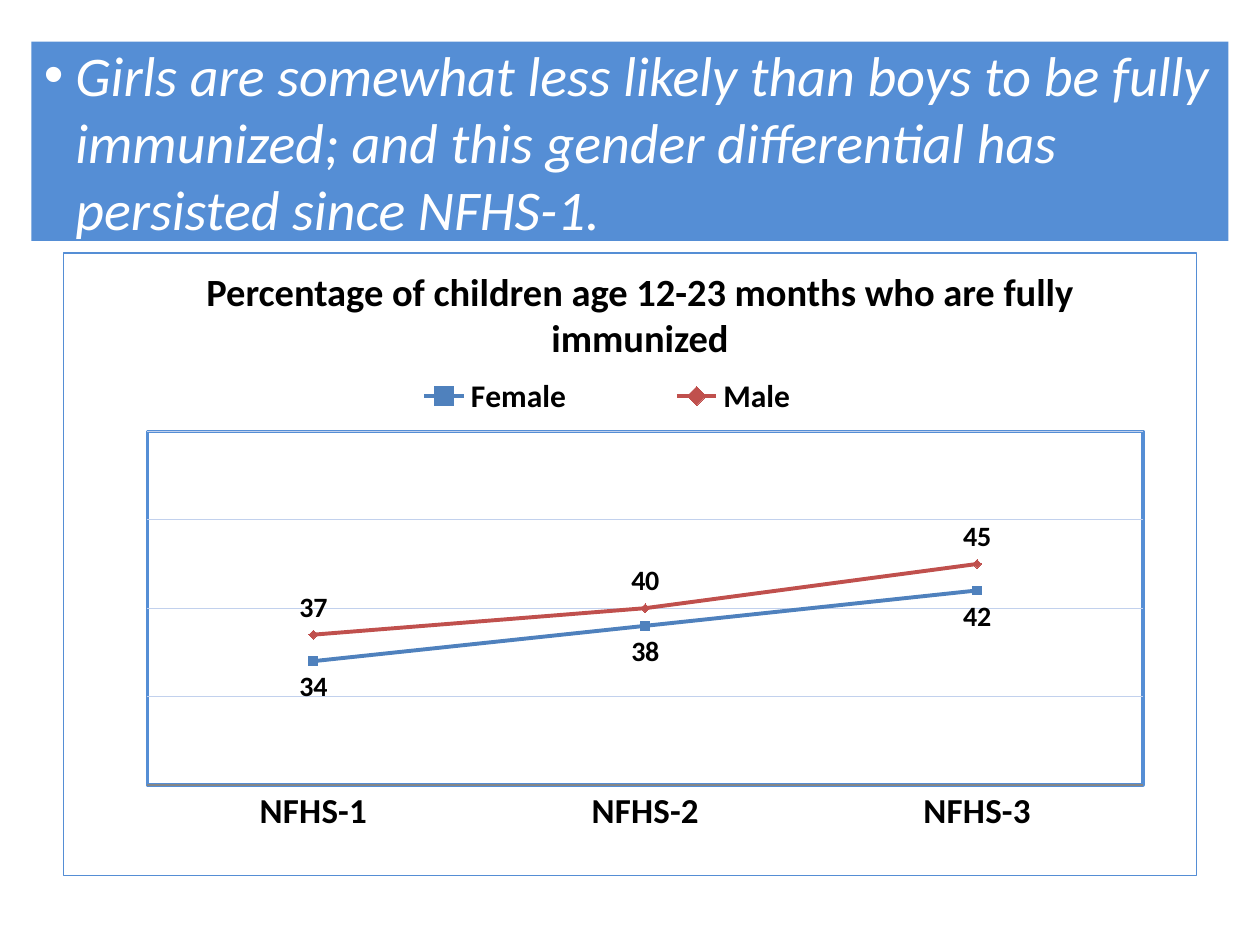
from lxml import etree
from pptx import Presentation
from pptx.chart.data import CategoryChartData
from pptx.dml.color import RGBColor
from pptx.enum.chart import (XL_CHART_TYPE, XL_LABEL_POSITION, XL_LEGEND_POSITION,
                             XL_MARKER_STYLE, XL_TICK_LABEL_POSITION, XL_TICK_MARK)
from pptx.enum.shapes import MSO_SHAPE
from pptx.enum.text import MSO_ANCHOR, PP_ALIGN
from pptx.oxml import parse_xml
from pptx.oxml.ns import nsdecls, qn
from pptx.util import Inches, Pt

LINE = XL_CHART_TYPE.LINE_MARKERS
ABOVE, BELOW = XL_LABEL_POSITION.ABOVE, XL_LABEL_POSITION.BELOW
SQUARE, DIAMOND = XL_MARKER_STYLE.SQUARE, XL_MARKER_STYLE.DIAMOND
NO_TICK, NEXT = XL_TICK_MARK.NONE, XL_TICK_LABEL_POSITION.NEXT_TO_AXIS
COLORS = {"band": "558ED5", "grid": "C2D1ED", "axis": "868686", "white": "FFFFFF",
          "black": "000000", "female": "4F81BD", "male": "C0504D"}
CATS = ["NFHS-1", "NFHS-2", "NFHS-3"]
# name, values, colour, marker, label place
ROWS = [("Female", [34, 38, 42], "female", SQUARE, BELOW),
        ("Male", [37, 40, 45], "male", DIAMOND, ABOVE)]


class Deck:
    font = "Calibri"
    wide, high = 10, 7.5

    def __init__(self):
        self.prs = Presentation()
        self.prs.slide_width = Inches(self.wide)
        self.prs.slide_height = Inches(self.high)
        self.slide = self.prs.slides.add_slide(self.prs.slide_layouts[6])

    def area(self, x, y, w, h):
        """Turn shares of the slide's size into lengths."""
        return [Inches(part * side) for part, side in
                zip((x, y, w, h), (self.wide, self.high) * 2)]

    def color(self, name):
        return RGBColor.from_string(COLORS[name])

    def style(self, font, size, color="black", bold=False, italic=False):
        font.name, font.size = self.font, Pt(size)
        font.bold, font.italic = bold, italic
        font.color.rgb = self.color(color)

    def stroke(self, line, color, width):
        line.color.rgb = self.color(color)
        line.width = Pt(width)

    def band(self, box, text, size):
        shape = self.slide.shapes.add_shape(MSO_SHAPE.RECTANGLE, *self.area(*box))
        shape.shadow.inherit = False
        shape.fill.solid()
        shape.fill.fore_color.rgb = self.color("band")
        shape.line.fill.background()
        frame = shape.text_frame
        frame.word_wrap = True
        frame.vertical_anchor = MSO_ANCHOR.MIDDLE
        para = frame.paragraphs[0]
        para.text, para.alignment = text, PP_ALIGN.LEFT
        props = para._p.get_or_add_pPr()
        props.set("marL", str(Inches(0.25)))
        props.set("indent", str(-Inches(0.25)))
        etree.SubElement(props, qn("a:buFont")).set("typeface", "Arial")
        etree.SubElement(props, qn("a:buChar")).set("char", "•")
        self.style(para.font, size, "white", italic=True)

    def label(self, box, text, size):
        frame = self.slide.shapes.add_textbox(*self.area(*box)).text_frame
        frame.word_wrap = True
        para = frame.paragraphs[0]
        para.text, para.alignment = text, PP_ALIGN.CENTER
        self.style(para.font, size, bold=True)

    def border(self, width):
        return parse_xml(
            f'<c:spPr {nsdecls("c", "a")}><a:noFill/><a:ln w="{Pt(width)}"><a:solidFill>'
            f'<a:srgbClr val="{COLORS["band"]}"/></a:solidFill></a:ln></c:spPr>')

    def layout(self, box, target=""):
        """Place a chart part by shares of the chart's size."""
        sizes = "".join(f'<c:{key} val="{share}"/>' for key, share in zip("xywh", box))
        return parse_xml(
            f'<c:layout {nsdecls("c")}><c:manualLayout>{target}'
            f'<c:xMode val="edge"/><c:yMode val="edge"/>{sizes}'
            '</c:manualLayout></c:layout>')

    def chart(self, box, plot, key):
        data = CategoryChartData(number_format="0")
        data.categories = CATS
        for name, vals, *_ in ROWS:
            data.add_series(name, vals)
        chart = self.slide.shapes.add_chart(LINE, *self.area(*box), data).chart
        self.style(chart.font, 10)
        chart.has_title = False

        # Legend
        chart.has_legend = True
        legend = chart.legend
        legend.position = XL_LEGEND_POSITION.TOP
        legend.include_in_layout = False
        self.style(legend.font, 18, bold=True)

        # Axes
        cat, val = chart.category_axis, chart.value_axis
        cat.major_tick_mark = cat.minor_tick_mark = NO_TICK
        cat.tick_label_position = NEXT
        self.style(cat.tick_labels.font, 20, bold=True)
        self.stroke(cat.format.line, "axis", 0.75)
        val.minimum_scale, val.maximum_scale, val.major_unit = 20, 60, 10
        val.has_major_gridlines = True
        self.stroke(val.major_gridlines.format.line, "grid", 0.75)
        val.visible = False

        # Series
        chart.plots[0].vary_by_categories = False
        for series, (_, _, color, mark, place) in zip(chart.plots[0].series, ROWS):
            series.smooth = False
            self.stroke(series.format.line, color, 2.25)
            series.marker.style, series.marker.size = mark, 5
            look = series.marker.format
            look.fill.solid()
            look.fill.fore_color.rgb = self.color(color)
            self.stroke(look.line, color, 0.75)
            tags = series.data_labels
            tags.show_value, tags.position = True, place
            tags.number_format, tags.number_format_is_linked = "0", False
            self.style(tags.font, 16, bold=True)

        # Borders and layouts
        root = chart._chartSpace
        root.find(qn("c:txPr")).addprevious(self.border(0.75))
        inner = root.chart.plotArea
        inner.append(self.border(1.75))
        for part in (inner, legend._element):
            for old in part.findall(qn("c:layout")):
                part.remove(old)
        inner.insert(0, self.layout(plot, '<c:layoutTarget val="inner"/>'))
        legend._element.find(qn("c:legendPos")).addnext(self.layout(key))


def main():
    deck = Deck()
    deck.band((0.025, 0.044, 0.95, 0.211),
              "Girls are somewhat less likely than boys to be fully immunized; "
              "and this gender differential has persisted since NFHS-1.", 32)
    deck.chart((0.05, 0.267, 0.9, 0.66), (0.074, 0.287, 0.879, 0.568),
               (0.23, 0.19, 0.5, 0.08))
    deck.label((0.083, 0.277, 0.85, 0.112),
               "Percentage of children age 12-23 months who are fully immunized", 22)
    deck.prs.save("out.pptx")


if __name__ == "__main__":
    main()
